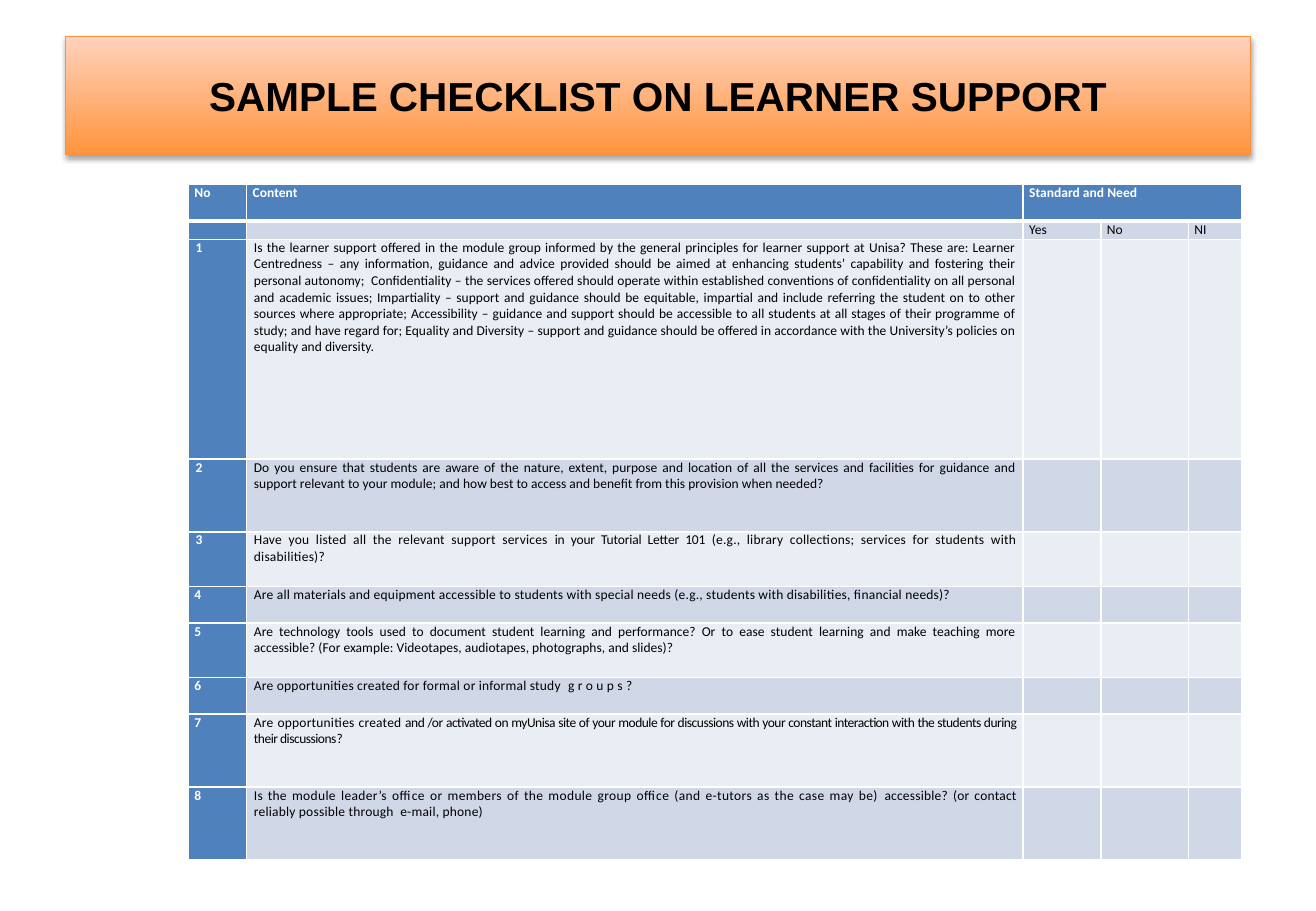
import pptx
import pptx.util
import pptx.dml.color
import pptx.enum.shapes
import pptx.enum.text
import pptx.oxml
import pptx.oxml.ns

Inches = pptx.util.Inches
Pt = pptx.util.Pt
ALIGN = pptx.enum.text.PP_ALIGN
ANCHOR = pptx.enum.text.MSO_ANCHOR

BLUE, PALE, LIGHT, WHITE, BLACK = "4F81BD", "D0D8E8", "E9EDF4", "FFFFFF", "000000"
COLUMN_WIDTHS = [0.48, 6.39, 0.64, 0.72, 0.44]
ROW_HEIGHTS = [0.3, 0.15, 1.81, 0.6, 0.45, 0.3, 0.45, 0.3, 0.6, 0.6]
HEADINGS = ["No", "Content", "Standard and Need"]
ANSWERS = ["Yes", "No", "NI"]
QUESTIONS = [
    [("Is the learner support offered in the module group informed by the general principles for "
      "learner support at Unisa? These are: Learner Centredness – any information, guidance and "
      "advice provided should be aimed at enhancing students’ capability and fostering their "
      "personal autonomy;  Confidentiality – the services offered should operate within established "
      "conventions of confidentiality on all personal and academic issues; ", 0),
     ("Impartiality – support "
      "and guidance should be equitable, impartial and include referring the student on to other "
      "sources where appropriate; Accessibility – guidance and support should be accessible to all "
      "students at all stages of their programme of study; and have regard for; Equality and "
      "Diversity – support and guidance should be offered in accordance with the University’s "
      "policies on equality and diversity.", 0)],
    [("Do you ensure that students are aware of the nature, extent, purpose and location of all the "
      "services and facilities for guidance and support relevant to your module; and how best to "
      "access and benefit from this provision when needed?", 0)],
    [("Have you listed all the relevant support services", 0.1),
     (" in your Tutorial Letter 101 ", -0.1),
     ("(e.g., library collections; services for students with disabilities)?", 0.1)],
    [("Are all materials and equipment accessible to students with special needs (e.g., students "
      "with disabilities, financial needs)?", 0.1)],
    [("Are technology tools used to document student learning and performance? Or to ease student "
      "learning and make teaching more accessible? (For example: Videotapes, audiotapes, "
      "photographs, and slides)?", 0)],
    [("Are opportunities created for formal or informal study", 0.1), (" groups", 2), ("?", 0)],
    [("Are opportunities created", 0.1),
     (" and /or activated on myUnisa site of your module for discussions with your constant "
      "interaction with the students during their discussions", -0.3), ("?", 0)],
    [("Is the", 0.1),
     (" module leader’s office or members of the module group office (and e-tutors as the case "
      "may be) ", 0.2),
     ("accessible? (or contact reliably possible through  e-mail, phone)", 0.1)],
]


def rgb(color):
    return pptx.dml.color.RGBColor.from_string(color)


def set_format(target, values):
    for name, value in values.items():
        setattr(target, name, value)


def xml(markup):
    return pptx.oxml.parse_xml(markup.replace(" ", f" {pptx.oxml.ns.nsdecls('a')} ", 1))


def add_run(paragraph, text, size, font, color, bold, spacing=0):
    run = paragraph.add_run()
    run.text = text
    set_format(run.font, {"size": Pt(size), "name": font, "bold": bold})
    run.font.color.rgb = rgb(color)
    if spacing:
        run._r.get_or_add_rPr().set("spc", str(round(spacing * 100)))


def add_title(slide, left, top, width, height):
    banner = slide.shapes.add_shape(pptx.enum.shapes.MSO_SHAPE.RECTANGLE,
                                    Inches(left), Inches(top), Inches(width), Inches(height))
    banner.fill.gradient()
    banner.fill.gradient_angle = 90
    for stop, color, position in zip(banner.fill.gradient_stops, ["FF953E", "FFD2BD"], [0, 1]):
        stop.color.rgb = rgb(color)
        stop.position = position
    banner.line.color.rgb = rgb("F69240")
    banner.line.width = Pt(0.75)
    banner.shadow.inherit = False
    effects = banner._element.spPr.find(pptx.oxml.ns.qn("a:effectLst"))
    effects.append(xml(
        f'<a:outerShdw blurRad="{Pt(3.1)}" dist="{Pt(1.8)}" dir="5400000" rotWithShape="0">'
        f'<a:srgbClr val="{BLACK}"><a:alpha val="35000"/></a:srgbClr></a:outerShdw>'))
    set_format(banner.text_frame, {"word_wrap": True, "vertical_anchor": ANCHOR.MIDDLE})
    heading = banner.text_frame.paragraphs[0]
    heading.alignment = ALIGN.CENTER
    add_run(heading, "SAMPLE CHECKLIST ON LEARNER SUPPORT", 24, "Arial", BLACK, True)


def fill_cell(cell, row, fill, pieces=(), color=BLACK, bold=False, indent=0):
    set_format(cell, {"margin_left": Inches(0.05), "margin_right": Inches(0.05),
                      "margin_top": 0, "margin_bottom": 0, "vertical_anchor": ANCHOR.TOP})
    borders = {"L": 1, "R": 1, "T": 3 if row == 1 else 1, "B": 3 if row == 0 else 1}
    for side, width in borders.items():
        cell._tc.get_or_add_tcPr().append(xml(
            f'<a:ln{side} w="{Pt(width)}"><a:solidFill><a:srgbClr val="{WHITE}"/>'
            f'</a:solidFill></a:ln{side}>'))
    cell.fill.solid()
    cell.fill.fore_color.rgb = rgb(fill)
    paragraph = cell.text_frame.paragraphs[0]
    paragraph.alignment = ALIGN.JUSTIFY
    if indent:
        paragraph._p.get_or_add_pPr().set("marL", str(Inches(indent)))
    for text, spacing in pieces:
        add_run(paragraph, text, 8, "Calibri", color, bold, spacing)
    paragraph._p.append(xml('<a:endParaRPr sz="800"/>'))


def add_checklist(slide, left, top):
    table = slide.shapes.add_table(
        len(ROW_HEIGHTS), len(COLUMN_WIDTHS), Inches(left), Inches(top),
        Inches(sum(COLUMN_WIDTHS)), Inches(sum(ROW_HEIGHTS))).table
    for column, width in zip(table.columns, COLUMN_WIDTHS):
        column.width = Inches(width)
    for row, height in zip(table.rows, ROW_HEIGHTS):
        row.height = Inches(height)

    table.cell(0, 2).merge(table.cell(0, 4))
    for column in range(len(COLUMN_WIDTHS)):
        heading = [(text, 0) for text in HEADINGS[column:column + 1]]
        fill_cell(table.cell(0, column), 0, BLUE, heading, WHITE, True)
        answer = [(ANSWERS[column - 2], 0)] if column >= 2 else []
        fill_cell(table.cell(1, column), 1, PALE if column else BLUE, answer)

    for number, question in enumerate(QUESTIONS, 1):
        row = number + 1
        shade = LIGHT if number % 2 else PALE
        fill_cell(table.cell(row, 0), row, BLUE, [(str(number), 0)], WHITE, True,
                  0.01 if number <= 3 else 0)
        fill_cell(table.cell(row, 1), row, shade, question, indent=0.01)
        for column in range(2, len(COLUMN_WIDTHS)):
            fill_cell(table.cell(row, column), row, shade)


def main():
    deck = pptx.Presentation()
    set_format(deck, {"slide_width": Inches(10.83), "slide_height": Inches(7.5)})
    slide = deck.slides.add_slide(deck.slide_layouts[6])
    add_title(slide, 0.54, 0.3, 9.75, 0.97)
    add_checklist(slide, 1.55, 1.52)
    deck.save("out.pptx")


if __name__ == "__main__":
    main()
